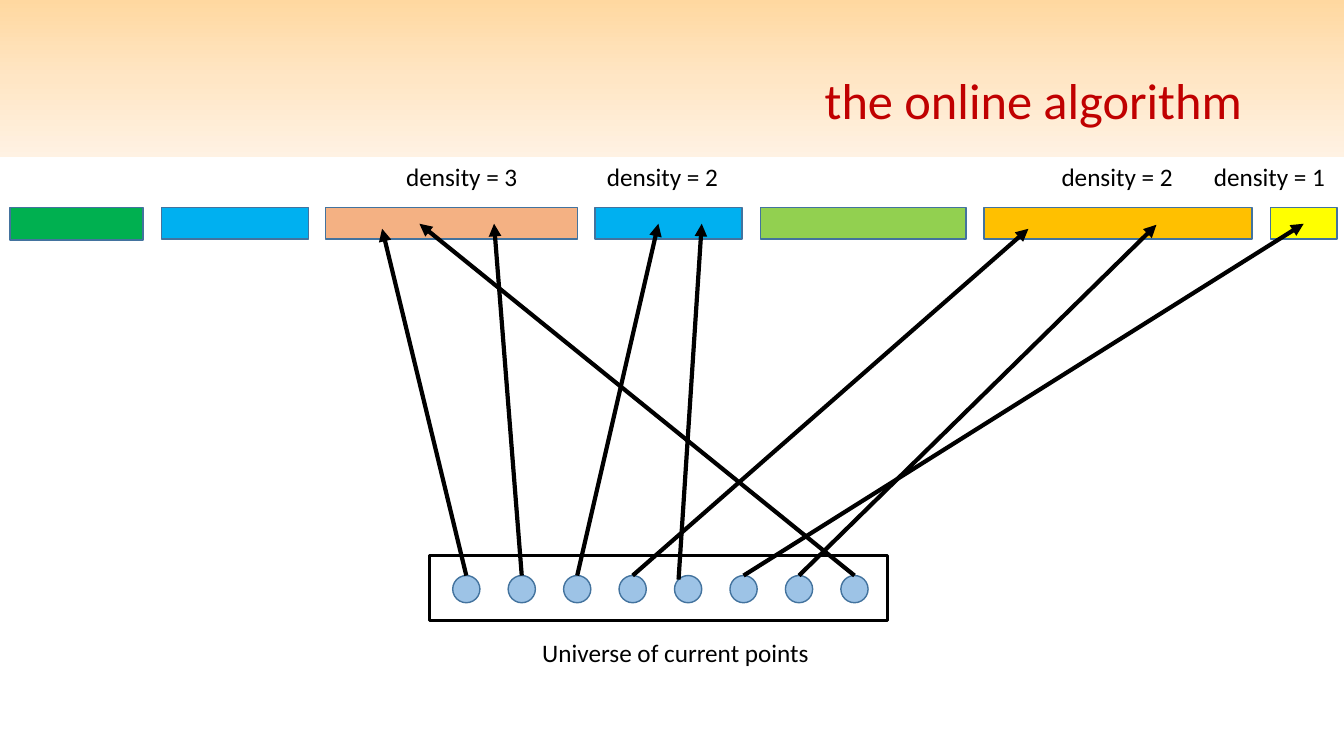
import copy
from dataclasses import dataclass

import pptx
import pptx.dml.color
import pptx.enum.shapes
import pptx.enum.text
import pptx.oxml
import pptx.oxml.ns
import pptx.util

PX = 9144  # EMU per px, 100 px to the inch


@dataclass(frozen=True)
class Theme:
    font: str = "Calibri"
    title_size: int = 36
    label_size: int = 18
    title: str = "C00000"
    ink: str = "000000"
    outline: str = "43739E"
    point: str = "9DC3E6"
    band: tuple = ("FFD8A0", "FFE6C5", "FFF2E3")
    thin: float = 1
    frame: float = 2.25
    arrow: float = 3


@dataclass(frozen=True)
class Interval:
    left: int
    width: int
    color: str
    height: int = 31


@dataclass(frozen=True)
class Label:
    text: str
    left: int
    top: int
    width: int


@dataclass(frozen=True)
class Assignment:
    point: int
    x: int
    y: int
    start: tuple | None = None  # None: top of the point


THEME = Theme()
INTERVAL_TOP = 206
DENSITY_TOP, DENSITY_WIDTH = 155, 132
POINT_LEFT, POINT_TOP, POINT_SIZE, POINT_STEP, POINT_COUNT = 449, 571, 27, 55, 8

INTERVALS = [
    Interval(10, 132, "00B050", 32),
    Interval(160, 146, "00B0F0"),
    Interval(323, 250, "F4B183"),
    Interval(590, 146, "00B0F0"),
    Interval(754, 204, "92D050"),
    Interval(976, 266, "FFC000"),
    Interval(1260, 66, "FFFF00"),
]
ASSIGNMENTS = [
    Assignment(0, 379, 227),
    Assignment(1, 490, 222),
    Assignment(2, 653, 222),
    Assignment(3, 1020, 227),
    Assignment(4, 696, 222, (673, 575)),
    Assignment(5, 1293, 222),
    Assignment(6, 1147, 223),
    Assignment(7, 416, 222),
]
LABELS = [Label("Universe of current points", 528, 627, 287)] + [
    Label(f"density = {density}", left, DENSITY_TOP, DENSITY_WIDTH)
    for density, left in ((3, 393), (2, 592), (2, 1043), (1, 1194))
]


def px(*lengths: int) -> list:
    return [pptx.util.Emu(length * PX) for length in lengths]


def rgb(color: str) -> pptx.dml.color.RGBColor:
    return pptx.dml.color.RGBColor.from_string(color)


def write(paragraph, text: str, size: int, color: str) -> None:
    run = paragraph.add_run()
    run.text = text
    run.font.name = THEME.font
    run.font.size = pptx.util.Pt(size)
    run.font.color.rgb = rgb(color)


def add_figure(slide, kind, box: tuple, fill: str | None, line: str, weight: float):
    figure = slide.shapes.add_shape(kind, *px(*box))
    figure.shadow.inherit = False
    if fill:
        figure.fill.solid()
        figure.fill.fore_color.rgb = rgb(fill)
    else:
        figure.fill.background()
    figure.line.color.rgb = rgb(line)
    figure.line.width = pptx.util.Pt(weight)
    return figure


def add_band(slide, title) -> None:
    band = slide.shapes.add_shape(
        pptx.enum.shapes.MSO_SHAPE.RECTANGLE, *px(0, 0, 1333, 156))
    band.shadow.inherit = False
    band.line.fill.background()
    band.fill.gradient()
    band.fill.gradient_angle = 270
    stops = band.element.find(".//" + pptx.oxml.ns.qn("a:gsLst"))
    stops.append(copy.deepcopy(stops[0]))
    for index, (stop, color) in enumerate(zip(band.fill.gradient_stops, THEME.band)):
        stop.position = index / 2
        stop.color.rgb = rgb(color)
    title.element.addprevious(band.element)  # behind the title


def add_title(slide, text: str) -> None:
    title = slide.shapes.title
    title.left, title.top, title.width, title.height = px(92, 30, 1150, 145)
    frame = title.text_frame
    frame.auto_size = pptx.enum.text.MSO_AUTO_SIZE.NONE
    frame.vertical_anchor = pptx.enum.text.MSO_ANCHOR.MIDDLE
    heading = frame.paragraphs[0]
    heading.alignment = pptx.enum.text.PP_ALIGN.RIGHT
    heading.line_spacing = 0.9
    write(heading, text, THEME.title_size, THEME.title)
    add_band(slide, title)


def add_label(slide, label: Label) -> None:
    box = slide.shapes.add_textbox(*px(label.left, label.top, label.width, 40))
    box.text_frame.word_wrap = False
    box.text_frame.auto_size = pptx.enum.text.MSO_AUTO_SIZE.SHAPE_TO_FIT_TEXT
    write(box.text_frame.paragraphs[0], label.text, THEME.label_size, THEME.ink)


def add_arrow(slide, assignment: Assignment, point) -> None:
    start = assignment.start or (0, 0)
    arrow = slide.shapes.add_connector(
        pptx.enum.shapes.MSO_CONNECTOR.STRAIGHT,
        *px(*start, assignment.x, assignment.y))
    if assignment.start is None:
        arrow.begin_connect(point, 0)
    arrow.line.color.rgb = rgb(THEME.ink)
    arrow.line.width = pptx.util.Pt(THEME.arrow)
    namespace = pptx.oxml.ns.nsdecls("a")
    arrow.line._get_or_add_ln().append(
        pptx.oxml.parse_xml(f'<a:tailEnd {namespace} type="triangle"/>'))
    arrow.element.spPr.append(pptx.oxml.parse_xml(f"<a:effectLst {namespace}/>"))


def main() -> None:
    deck = pptx.Presentation()
    deck.slide_width, deck.slide_height = px(1333, 750)
    slide = deck.slides.add_slide(deck.slide_layouts.get_by_name("Title Only"))
    shapes = pptx.enum.shapes.MSO_SHAPE

    add_title(slide, "the online algorithm")

    # Intervals
    for interval in INTERVALS:
        add_figure(slide, shapes.RECTANGLE,
                   (interval.left, INTERVAL_TOP, interval.width, interval.height),
                   interval.color, THEME.outline, THEME.thin)

    # Universe of points
    add_figure(slide, shapes.RECTANGLE, (426, 551, 454, 65), None,
               THEME.ink, THEME.frame)
    points = [
        add_figure(slide, shapes.OVAL,
                   (POINT_LEFT + index * POINT_STEP, POINT_TOP, POINT_SIZE, POINT_SIZE),
                   THEME.point, THEME.outline, THEME.thin)
        for index in range(POINT_COUNT)
    ]

    # Points assigned to intervals
    for assignment in ASSIGNMENTS:
        add_arrow(slide, assignment, points[assignment.point])

    # Captions
    for label in LABELS:
        add_label(slide, label)

    deck.save("out.pptx")


if __name__ == "__main__":
    main()
